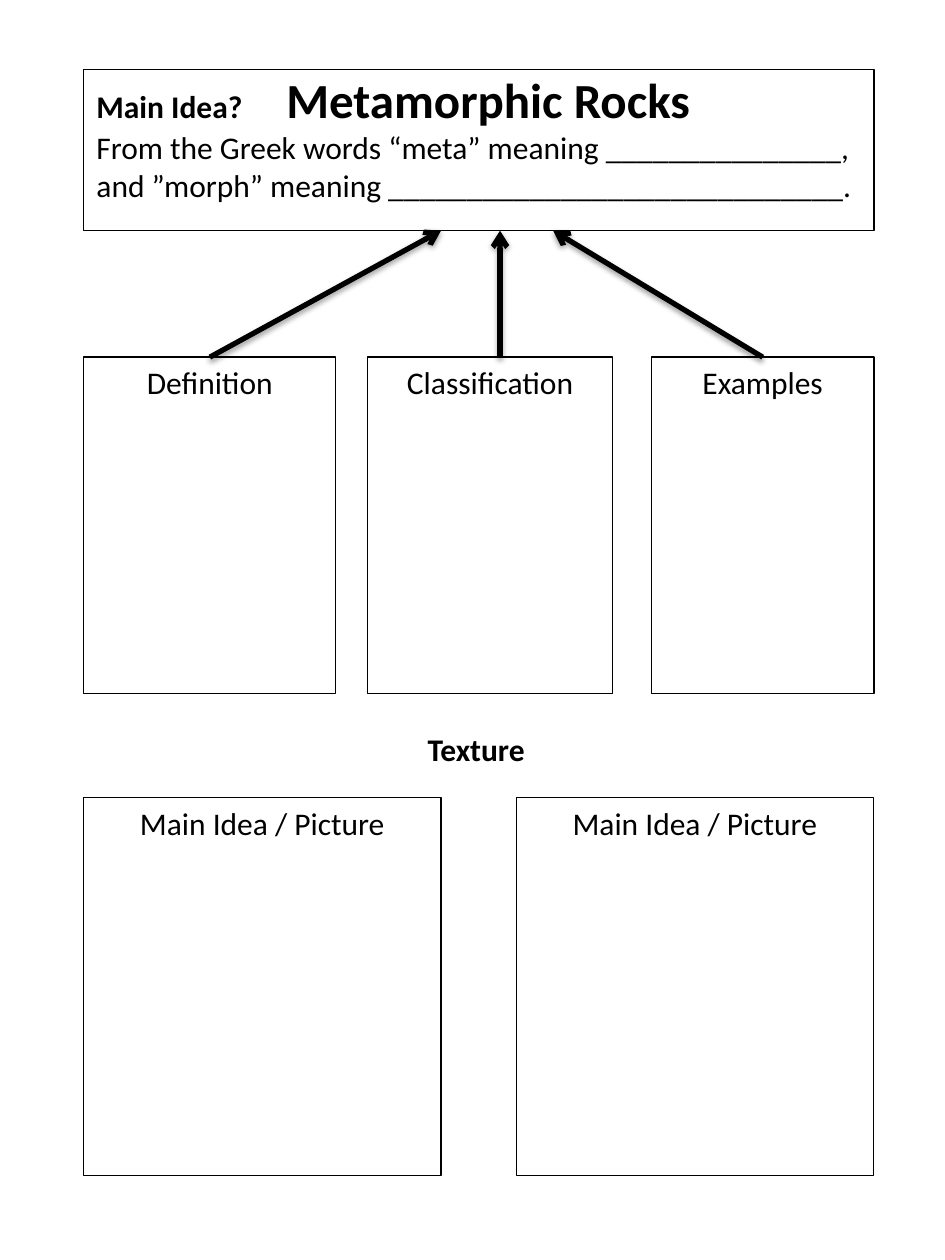
import pptx
import pptx.util
import pptx.dml.color
import pptx.enum.shapes
import pptx.enum.text
import pptx.oxml
import pptx.oxml.ns
from pptx.util import Cm

HEADING = [
    [("Main Idea?\t", "body", True), ("Metamorphic Rocks", "title", True)],
    [("From the Greek words “meta” meaning _______________, "
      "and ”morph” meaning _____________________________.", "body", False)],
]
SECTION = "Texture"
ROWS = [
    {"top": 7.2, "height": 6.78, "pitch": 5.72,
     "boxes": [("Definition", 5.08), ("Classification", 4.94), ("Examples", 4.49)]},
    {"top": 16.08, "height": 7.62, "pitch": 8.72,
     "boxes": [("Main Idea / Picture", 7.2), ("Main Idea / Picture", 7.2)]},
]
LEFT = 1.69
TITLE_TOP, TITLE_WIDTH, TITLE_HEIGHT = 1.4, 15.93, 3.25
TITLE_TAB = 3.83
ARROWS = [
    {"box": 0, "to": 8.89},
    {"from": 10.08, "to": 10.08},
    {"box": 2, "to": 11.15},
]

THEME = {
    "font": "Calibri",
    "ink": pptx.dml.color.RGBColor(0, 0, 0),
    "sizes": {"title": pptx.util.Pt(28), "body": pptx.util.Pt(18)},
    "outline": pptx.util.Pt(0.75),
    "arrow": pptx.util.Pt(3),
}
NAMESPACE = pptx.oxml.ns.nsdecls("a")
ALIGN = pptx.enum.text.PP_ALIGN
ANCHOR = pptx.enum.text.MSO_ANCHOR
AUTO_SIZE = pptx.enum.text.MSO_AUTO_SIZE


def add_run(para, text, size="body", bold=False):
    span = para.add_run()
    span.text = text
    span.font.name = THEME["font"]
    span.font.size = THEME["sizes"][size]
    span.font.bold = bold
    span.font.color.rgb = THEME["ink"]


def outline(shape):
    shape.line.color.rgb = THEME["ink"]
    shape.line.width = THEME["outline"]


def fill_title(title):
    title.left, title.top = Cm(LEFT), Cm(TITLE_TOP)
    title.width, title.height = Cm(TITLE_WIDTH), Cm(TITLE_HEIGHT)
    outline(title)
    frame = title.text_frame
    frame.auto_size = AUTO_SIZE.NONE
    frame.word_wrap = True
    frame.vertical_anchor = ANCHOR.TOP
    frame.margin_top = 0
    for index, runs in enumerate(HEADING):
        para = frame.add_paragraph() if index else frame.paragraphs[0]
        para.alignment = ALIGN.LEFT
        if index == 0:
            para._p.get_or_add_pPr().append(pptx.oxml.parse_xml(
                f'<a:tabLst {NAMESPACE}><a:tab pos="{Cm(TITLE_TAB)}" algn="l"/></a:tabLst>'))
        for text, size, bold in runs:
            add_run(para, text, size, bold)


def add_box(page, label, left, top, width, height):
    box = page.shapes.add_shape(pptx.enum.shapes.MSO_SHAPE.RECTANGLE,
                                Cm(left), Cm(top), Cm(width), Cm(height))
    box.shadow.inherit = False
    box.fill.background()
    outline(box)
    box.text_frame.word_wrap = True
    box.text_frame.vertical_anchor = ANCHOR.TOP
    para = box.text_frame.paragraphs[0]
    para.alignment = ALIGN.CENTER
    add_run(para, label)
    return box


def add_arrow(page, arrow, boxes):
    line = page.shapes.add_connector(
        pptx.enum.shapes.MSO_CONNECTOR.STRAIGHT,
        Cm(arrow.get("from", 0)), Cm(ROWS[0]["top"]),
        Cm(arrow["to"]), Cm(TITLE_TOP + TITLE_HEIGHT))
    if "box" in arrow:
        line.begin_connect(boxes[arrow["box"]], 0)
    line.line.color.rgb = THEME["ink"]
    line.line.width = THEME["arrow"]
    line.line._get_or_add_ln().append(
        pptx.oxml.parse_xml(f'<a:tailEnd {NAMESPACE} type="arrow"/>'))
    line._element.spPr.append(pptx.oxml.parse_xml(
        f'<a:effectLst {NAMESPACE}>'
        '<a:outerShdw blurRad="40000" dist="20000" dir="5400000" rotWithShape="0">'
        f'<a:srgbClr val="{THEME["ink"]}"><a:alpha val="38000"/></a:srgbClr>'
        '</a:outerShdw></a:effectLst>'))


def add_section(page):
    box = page.shapes.add_textbox(Cm(8.05), Cm(14.6), Cm(3.1), Cm(1.02))
    box.text_frame.word_wrap = True
    box.text_frame.auto_size = AUTO_SIZE.SHAPE_TO_FIT_TEXT
    para = box.text_frame.paragraphs[0]
    para.alignment = ALIGN.CENTER
    add_run(para, SECTION, bold=True)


def main():
    deck = pptx.Presentation()
    deck.slide_width, deck.slide_height = Cm(19.05), Cm(25.4)
    page = deck.slides.add_slide(deck.slide_layouts[5])
    fill_title(page.shapes.title)
    boxes = [
        add_box(page, label, LEFT + column * row["pitch"], row["top"], width, row["height"])
        for row in ROWS
        for column, (label, width) in enumerate(row["boxes"])
    ]
    for arrow in ARROWS:
        add_arrow(page, arrow, boxes)
    add_section(page)
    deck.save("out.pptx")


if __name__ == "__main__":
    main()
